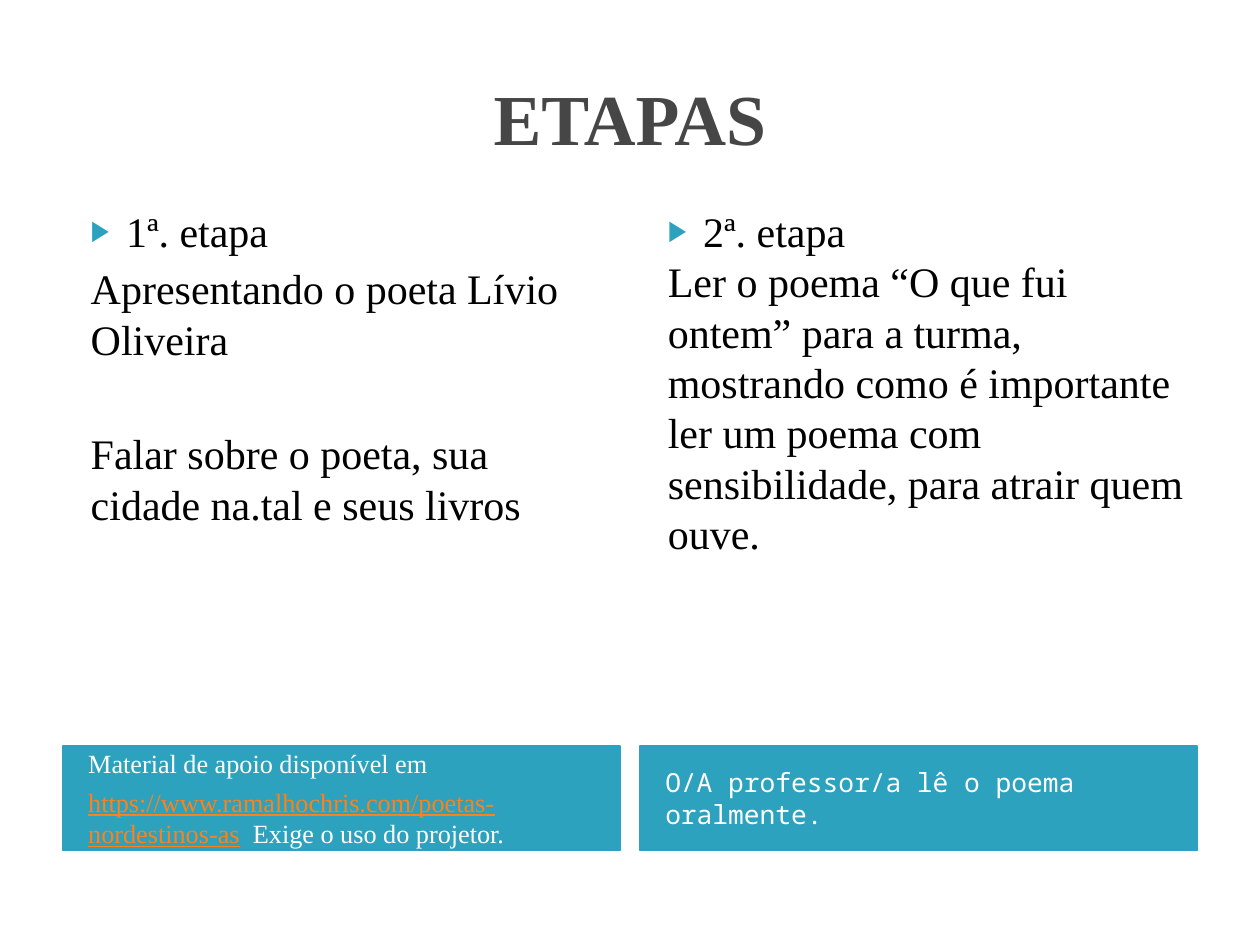
from dataclasses import dataclass

import pptx
import pptx.dml.color
import pptx.enum.text
import pptx.oxml
import pptx.oxml.ns
import pptx.util

Inches = pptx.util.Inches
Pt = pptx.util.Pt
RGBColor = pptx.dml.color.RGBColor
Anchor = pptx.enum.text.MSO_ANCHOR
Align = pptx.enum.text.PP_ALIGN

TEAL = RGBColor(0x2D, 0xA2, 0xBF)
ORANGE = RGBColor(0xFF, 0x81, 0x19)
GRAY = RGBColor(0x46, 0x46, 0x46)
BLACK = RGBColor(0, 0, 0)
WHITE = RGBColor(0xFF, 0xFF, 0xFF)
SERIF = "Times New Roman"
MONO = "Noto Sans Mono"

MARGIN = 0.5
COLUMN_WIDTH = 4.42
COLUMN_STEP = 4.58
COMPARISON_LAYOUT = 4


@dataclass(frozen=True)
class Run:
    text: str
    color: RGBColor = WHITE
    underline: bool = False


@dataclass(frozen=True)
class Paragraph:
    runs: tuple[Run, ...]
    space_before: float = 0


@dataclass(frozen=True)
class Stage:
    heading: str
    details: tuple[Paragraph, ...]
    support: tuple[Paragraph, ...]
    support_font: str


STAGES = (
    Stage(
        "1ª. etapa",
        (
            Paragraph((Run("Apresentando o poeta Lívio Oliveira", BLACK),), 4),
            Paragraph((Run("Falar sobre o poeta, sua cidade na.tal e seus livros", BLACK),), 36.8),
        ),
        (
            Paragraph((Run("Material de apoio disponível em"),)),
            Paragraph(
                (
                    Run("https://www.ramalhochris.com/poetas-nordestinos-as", ORANGE, True),
                    Run("  Exige o uso do projetor."),
                ),
                4,
            ),
        ),
        SERIF,
    ),
    Stage(
        "2ª. etapa",
        (
            Paragraph((Run(
                "Ler o poema “O que fui ontem” para a turma, mostrando como é importante "
                "ler um poema com sensibilidade, para atrair quem ouve.", BLACK),)),
        ),
        (Paragraph((Run("O/A professor/a lê o poema oralmente."),)),),
        MONO,
    ),
)


def place(shape, left: float, top: float, width: float, height: float) -> None:
    shape.left, shape.top = Inches(left), Inches(top)
    shape.width, shape.height = Inches(width), Inches(height)


def prepare_frame(shape, anchor, left_inset: float = 0.1):
    frame = shape.text_frame
    frame.word_wrap = True
    frame.auto_size = pptx.enum.text.MSO_AUTO_SIZE.NONE
    frame.vertical_anchor = anchor
    frame.margin_left, frame.margin_right = Inches(left_inset), Inches(0.1)
    frame.margin_top = frame.margin_bottom = Inches(0.05)
    return frame


def add_run(paragraph, text: str, *, size: float, color: RGBColor, font: str = SERIF,
            bold: bool = False, underline: bool = False) -> None:
    run = paragraph.add_run()
    run.text = text
    run.font.name = font
    run.font.size = Pt(size)
    run.font.bold = bold
    run.font.underline = underline
    run.font.color.rgb = color


def set_bullet(paragraph, left: float, indent: float, bullet: str = "") -> None:
    properties = paragraph._p.get_or_add_pPr()
    properties.set("marL", str(Inches(left)))
    properties.set("indent", str(Inches(indent)))
    namespace = pptx.oxml.ns.nsdecls("a")
    elements = [f"<a:buNone {namespace}/>"]
    if bullet:
        elements = [
            f'<a:buClr {namespace}><a:srgbClr val="{TEAL}"/></a:buClr>',
            f'<a:buSzPct {namespace} val="68000"/>',
            f'<a:buChar {namespace} char="{bullet}"/>',
        ]
    for element in elements:
        properties.append(pptx.oxml.parse_xml(element))


def write_paragraphs(frame, paragraphs: tuple[Paragraph, ...], *, size: float,
                     font: str = SERIF, left: float = 0, heading: str = "") -> None:
    """Fill a frame, with an optional bulleted heading above its paragraphs."""
    current = frame.paragraphs[0]
    if heading:
        set_bullet(current, 0.4, -0.28, "▶")
        current.space_before = Pt(0)
        add_run(current, heading, size=size, color=BLACK, font=font)
    for index, content in enumerate(paragraphs):
        if heading or index:
            current = frame.add_paragraph()
        set_bullet(current, left, 0)
        current.space_before = Pt(content.space_before)
        for run in content.runs:
            add_run(current, run.text, size=size, color=run.color, font=font,
                    underline=run.underline)


def draw_stage(stage: Stage, left: float, body, bar) -> None:
    place(bar, left, 5.92, COLUMN_WIDTH, 0.83)
    bar.fill.solid()
    bar.fill.fore_color.rgb = TEAL
    bar.line.color.rgb = TEAL
    bar.line.width = Pt(0.75)
    write_paragraphs(prepare_frame(bar, Anchor.MIDDLE, 0.2), stage.support,
                     size=15, font=stage.support_font)

    place(body, left, 1.58, COLUMN_WIDTH, 4.31)
    write_paragraphs(prepare_frame(body, Anchor.TOP), stage.details,
                     size=24, left=0.12, heading=stage.heading)


def main() -> None:
    presentation = pptx.Presentation()
    presentation.slide_width, presentation.slide_height = Inches(10), Inches(7.5)
    slide = presentation.slides.add_slide(presentation.slide_layouts[COMPARISON_LAYOUT])

    title = slide.shapes.title
    place(title, MARGIN, 0.3, 9, 1.25)
    paragraph = prepare_frame(title, Anchor.MIDDLE).paragraphs[0]
    paragraph.alignment = Align.CENTER
    add_run(paragraph, "ETAPAS", size=41, color=GRAY, bold=True)

    placeholders = {item.placeholder_format.idx: item for item in slide.placeholders}
    for index, stage in enumerate(STAGES):
        bar, body = placeholders[1 + 2 * index], placeholders[2 + 2 * index]
        draw_stage(stage, MARGIN + index * COLUMN_STEP, body, bar)

    presentation.save("out.pptx")


if __name__ == "__main__":
    main()
